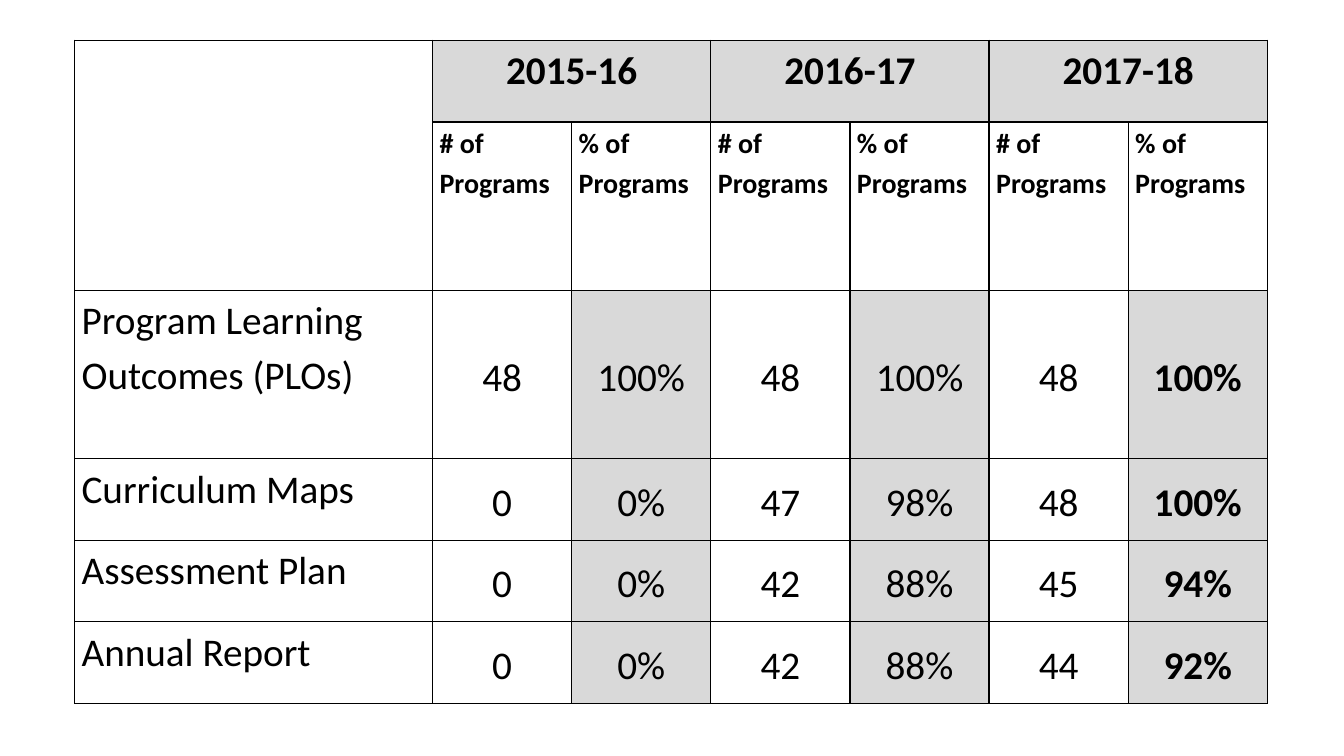
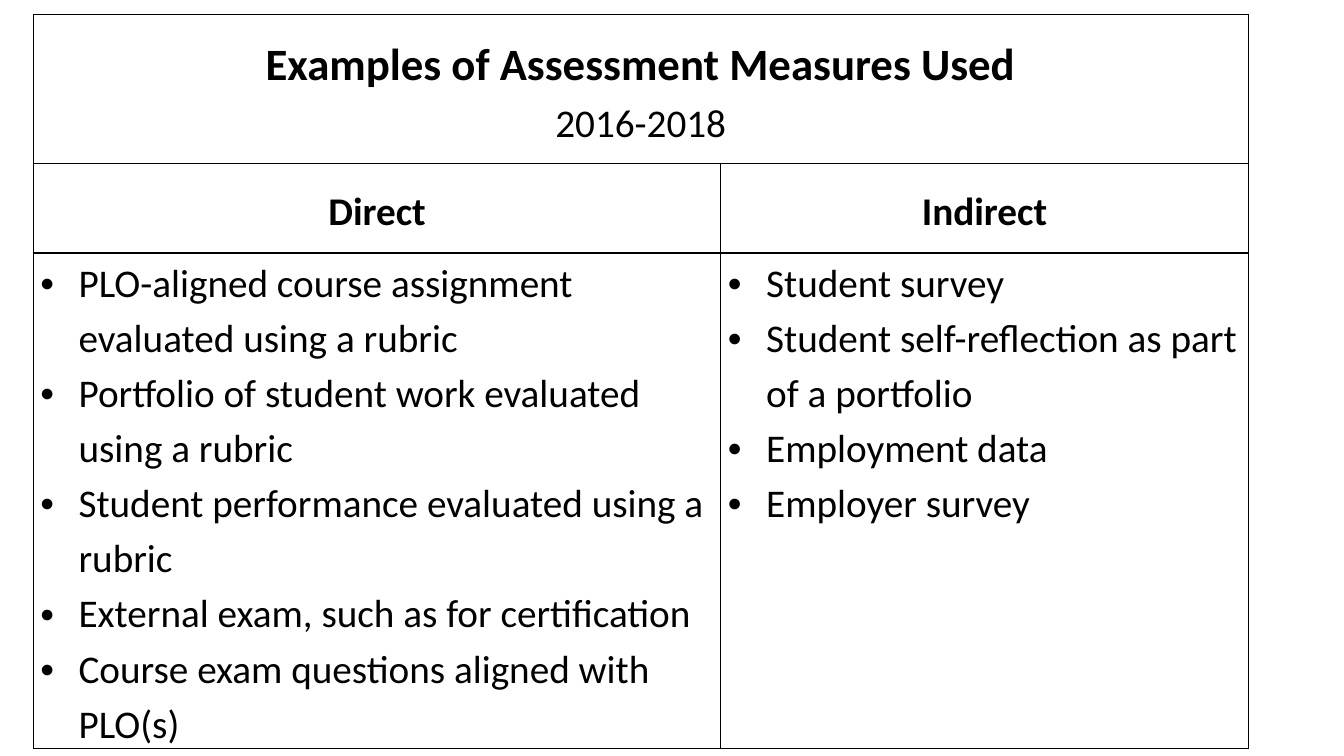
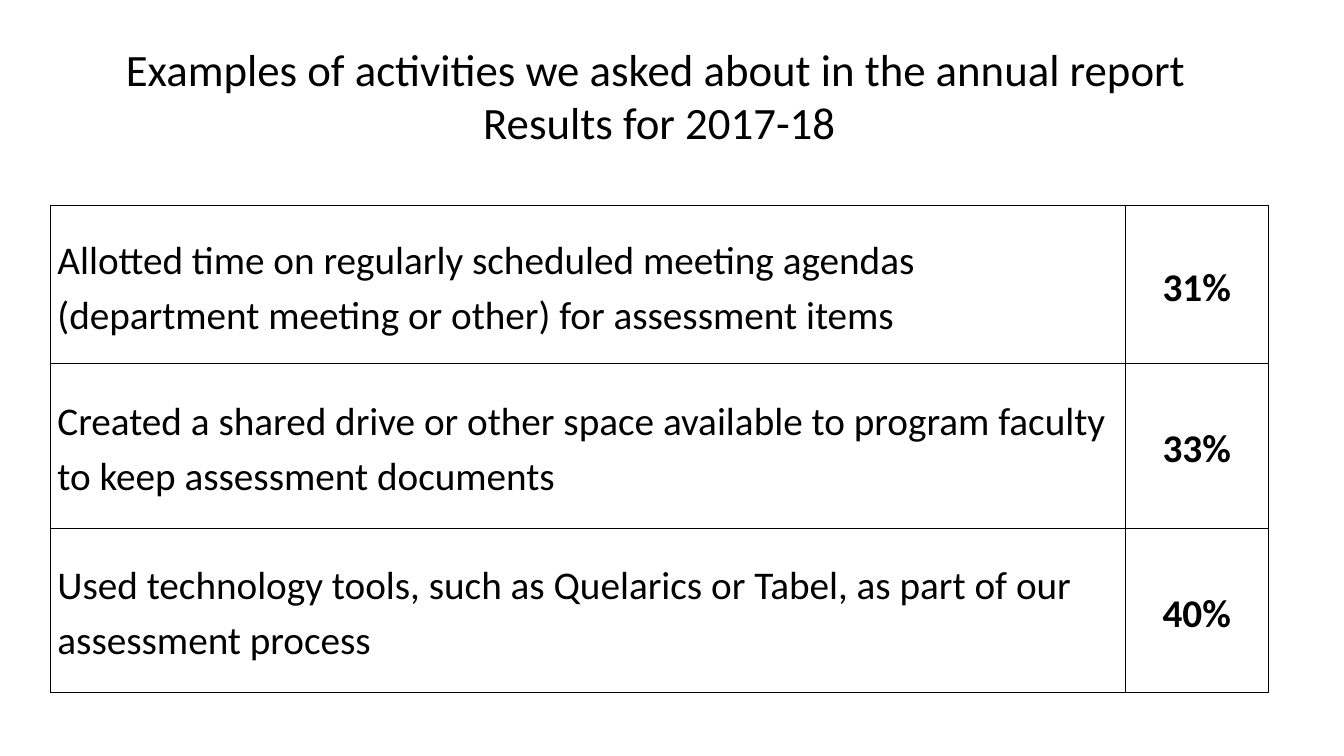
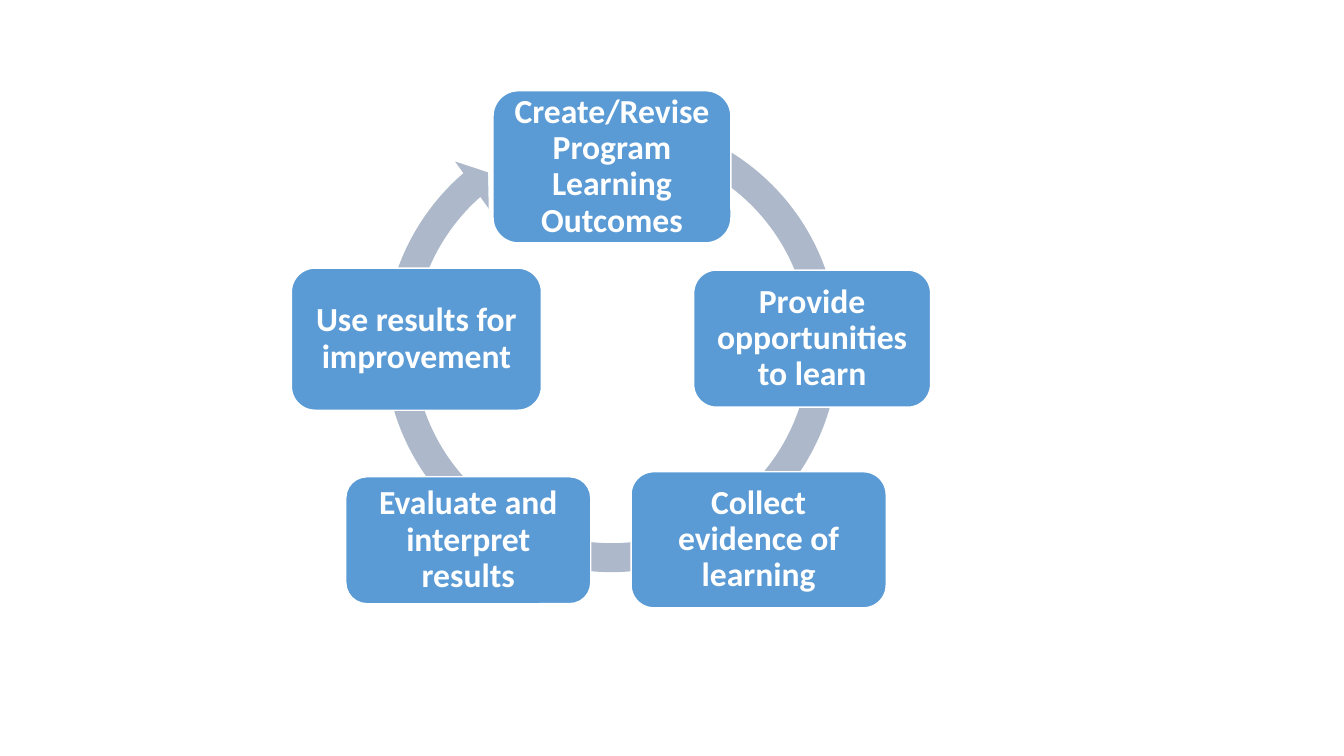
from lxml.etree import SubElement
from pptx import Presentation
from pptx.dml.color import RGBColor
from pptx.enum.shapes import MSO_SHAPE
from pptx.enum.text import MSO_ANCHOR, PP_ALIGN
from pptx.oxml.ns import qn
from pptx.util import Pt

# Shared style
SCALE = 9144  # EMU in one px, 100 px to the inch
FONT = "Calibri"
BLACK = RGBColor(0x00, 0x00, 0x00)
WHITE = RGBColor(0xFF, 0xFF, 0xFF)
GREY = RGBColor(0xD9, 0xD9, 0xD9)
BLUE = RGBColor(0x5B, 0x9B, 0xD5)
STEEL = RGBColor(0xAD, 0xB9, 0xCA)
LEFT, CENTER = PP_ALIGN.LEFT, PP_ALIGN.CENTER
TOP, MIDDLE = MSO_ANCHOR.TOP, MSO_ANCHOR.MIDDLE


def px(count):
    return count * SCALE


def box(*sides):
    return [px(side) for side in sides]


def bullet(para):
    props = para._p.get_or_add_pPr()
    props.set("marL", str(px(38)))
    props.set("indent", str(px(-38)))
    SubElement(props, qn("a:buFont"), typeface="Arial")
    SubElement(props, qn("a:buChar"), char="•")


def write(frame, lines, size=28, bold=False, align=LEFT, color=BLACK,
          space=1.0, after=0, dots=False):
    """Fill a text frame, one paragraph for each line."""
    for index, line in enumerate(lines):
        para = frame.paragraphs[0] if index == 0 else frame.add_paragraph()
        para.text = line
        para.alignment = align
        para.line_spacing = space
        para.space_after = Pt(after)
        if dots:
            bullet(para)
        font = para.font
        font.name, font.size, font.bold = FONT, Pt(size), bold
        font.color.rgb = color


def border(cell):
    props = cell._tc.get_or_add_tcPr()
    for side in ("a:lnL", "a:lnR", "a:lnT", "a:lnB"):
        line = SubElement(props, qn(side), w=str(Pt(1)))
        fill = SubElement(line, qn("a:solidFill"))
        SubElement(fill, qn("a:srgbClr"), val=str(BLACK))


def grid(slide, left, top, cols, rows):
    """Add a plain table with black rules."""
    frame = slide.shapes.add_table(
        len(rows), len(cols), *box(left, top, sum(cols), sum(rows)))
    table = frame.table
    table.first_row = table.horz_banding = False
    for col, width in zip(table.columns, cols):
        col.width = px(width)
    for row, height in zip(table.rows, rows):
        row.height = px(height)
    for cell in table.iter_cells():
        border(cell)
        cell.fill.background()
        cell.margin_left = cell.margin_right = px(7)
        cell.margin_top = cell.margin_bottom = 0
    return table


def put(cell, *lines, anchor=TOP, fill=None, **style):
    cell.vertical_anchor = anchor
    if fill is not None:
        cell.fill.solid()
        cell.fill.fore_color.rgb = fill
    write(cell.text_frame, lines, space=1.15, **style)


def paint(shape, color):
    shape.shadow.inherit = False
    shape.fill.solid()
    shape.fill.fore_color.rgb = color


# Slide 1: progress by year
YEARS = ("2015-16", "2016-17", "2017-18")
PROGRESS = (
    ("Program Learning Outcomes (PLOs)",
     "48", "100%", "48", "100%", "48", "100%"),
    ("Curriculum Maps", "0", "0%", "47", "98%", "48", "100%"),
    ("Assessment Plan", "0", "0%", "42", "88%", "45", "94%"),
    ("Annual Report", "0", "0%", "42", "88%", "44", "92%"),
)


def progress(slide):
    table = grid(slide, 74, 40, [355] + [138] * 6,
                 [81, 167, 167, 81, 81, 81])
    table.cell(0, 0).merge(table.cell(1, 0))
    for index, year in enumerate(YEARS):
        col = 1 + 2 * index
        head = table.cell(0, col)
        head.merge(table.cell(0, col + 1))
        put(head, year, bold=True, align=CENTER, after=6, fill=GREY)
        for step, sign in enumerate("#%"):
            put(table.cell(1, col + step), f"{sign} of Programs",
                size=20, bold=True, after=6)
    for row, (name, *values) in enumerate(PROGRESS, 2):
        put(table.cell(row, 0), name, after=6)
        for col, value in enumerate(values, 1):
            put(table.cell(row, col), value, anchor=MIDDLE, align=CENTER,
                after=6, bold=col == len(values),
                fill=GREY if col % 2 == 0 else None)


# Slide 2: direct and indirect measures
MEASURES = {
    "Direct": (
        "PLO-aligned course assignment evaluated using a rubric",
        "Portfolio of student work evaluated using a rubric",
        "Student performance evaluated using a rubric",
        "External exam, such as for certification",
        "Course exam questions aligned with PLO(s)",
    ),
    "Indirect": (
        "Student survey",
        "Student self-reflection as part of a portfolio",
        "Employment data",
        "Employer survey",
    ),
}


def measures(slide):
    table = grid(slide, 33, 14, [682, 523], [148, 89, 468])
    head = table.cell(0, 0)
    head.merge(table.cell(0, 1))
    put(head, "Examples of Assessment Measures Used", "2016-2018",
        anchor=MIDDLE, align=CENTER)
    title = head.text_frame.paragraphs[0].font
    title.size, title.bold = Pt(32), True
    for col, (kind, items) in enumerate(MEASURES.items()):
        put(table.cell(1, col), kind, anchor=MIDDLE, align=CENTER, bold=True)
        put(table.cell(2, col), *items, dots=True)


# Slide 3: activities in the annual report
REPORT = (
    ("Allotted time on regularly scheduled meeting agendas "
     "(department meeting or other) for assessment items", "31%", 0),
    ("Created a shared drive or other space available to program faculty "
     "to keep assessment documents", "33%", 0),
    ("Used technology tools, such as Quelarics or Tabel, as part of our "
     "assessment process", "40%", 6),
)


def report(slide):
    table = grid(slide, 50, 204, [1066, 142], [157, 163, 163])
    for row, (text, share, after) in enumerate(REPORT):
        put(table.cell(row, 0), text, anchor=MIDDLE, after=after)
        put(table.cell(row, 1), share, anchor=MIDDLE, align=CENTER, bold=True)
    frame = slide.shapes.add_textbox(*box(115, 36, 1078, 118)).text_frame
    frame.word_wrap = True
    write(frame, ("Examples of activities we asked about in the annual report",
                  "Results for 2017-18"), size=32)
    frame.paragraphs[1].alignment = CENTER


# Slide 4: assessment cycle
STEPS = (
    ("Create/Revise Program Learning Outcomes", 489, 90, 236, 151),
    ("Provide opportunities to learn", 688, 268, 235, 136),
    ("Collect evidence of learning", 626, 468, 253, 135),
    ("Evaluate and interpret results", 343, 473, 243, 126),
    ("Use results for improvement", 289, 266, 248, 141),
)
ARC = (0.06, 3.31, 137.36, 174.1, 0.06)


def cycle(slide):
    ring = slide.shapes.add_shape(
        MSO_SHAPE.CIRCULAR_ARROW, *box(367, 103, 479, 479))
    paint(ring, STEEL)
    ring.line.fill.background()
    for index, value in enumerate(ARC):
        ring.adjustments[index] = value
    for text, *place in STEPS:
        step = slide.shapes.add_shape(
            MSO_SHAPE.ROUNDED_RECTANGLE, *box(*place))
        paint(step, BLUE)
        step.line.color.rgb = WHITE
        step.line.width = Pt(1)
        frame = step.text_frame
        frame.word_wrap = True
        frame.vertical_anchor = MIDDLE
        frame.margin_left = frame.margin_right = px(10)
        frame.margin_top = frame.margin_bottom = px(10)
        write(frame, [text], size=24, bold=True, align=CENTER,
              color=WHITE, space=0.9)


def main():
    deck = Presentation()
    deck.slide_width, deck.slide_height = box(1333, 750)
    blank = deck.slide_layouts[6]
    for build in (progress, measures, report, cycle):
        build(deck.slides.add_slide(blank))
    deck.save("out.pptx")


if __name__ == "__main__":
    main()
